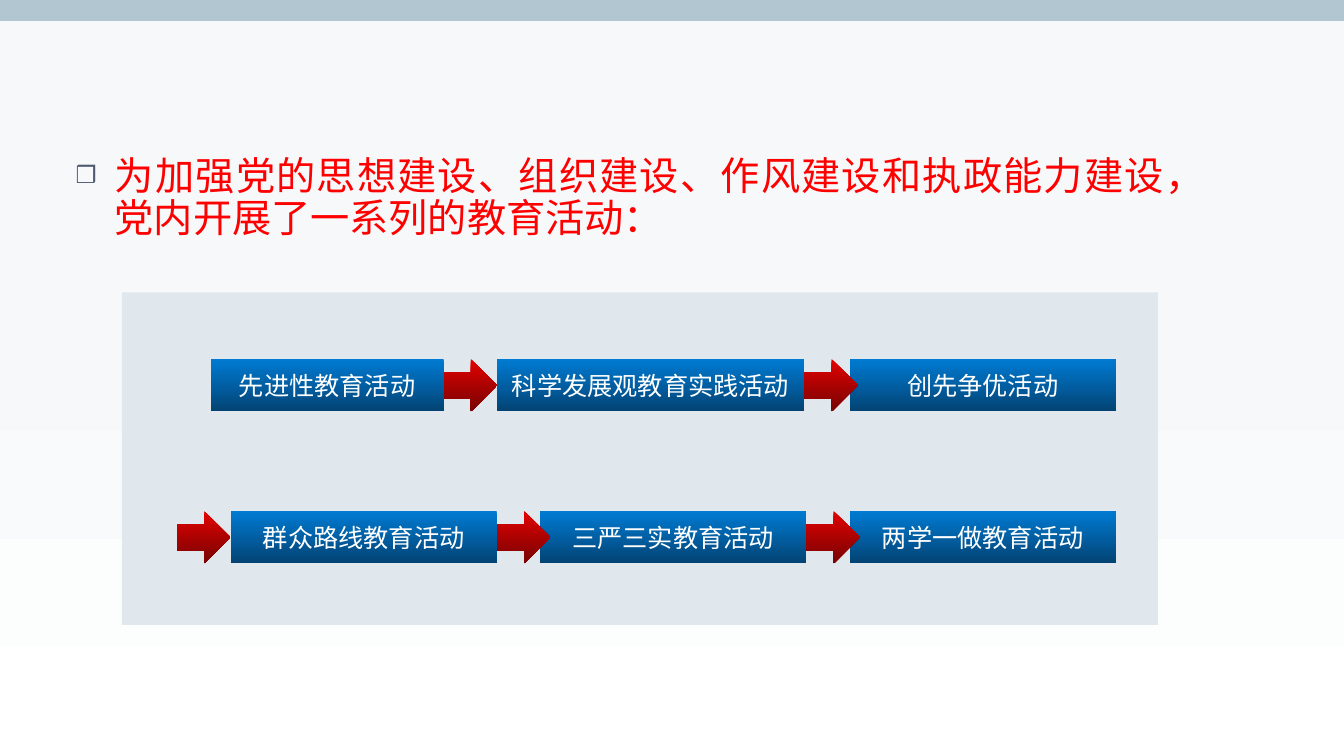
from lxml.etree import SubElement
from pptx import Presentation
from pptx.dml.color import RGBColor
from pptx.enum.shapes import MSO_SHAPE as SHAPE
from pptx.enum.text import MSO_ANCHOR as ANCHOR, MSO_AUTO_SIZE as AUTO, PP_ALIGN as ALIGN
from pptx.oxml.ns import qn
from pptx.util import Cm, Pt

CJK = "Noto Sans CJK SC"
BLUE = ("007BD3", "034373")
RED = ("E30000", "760303")
STEP_H, ARROW_W = 1.32, 1.35
ROWS = [
    (1.68, False, [(2.24, 5.87, "先进性教育活动"),
                   (9.45, 7.75, "科学发展观教育实践活动"),
                   (18.34, 6.71, "创先争优活动")]),
    (5.51, True, [(2.74, 6.71, "群众路线教育活动"),
                  (10.54, 6.71, "三严三实教育活动"),
                  (18.34, 6.71, "两学一做教育活动")]),
]


def rgb(value):
    """Turn a hex string into a colour."""
    return RGBColor.from_string(value)


def add_box(s, kind, box, colors, start=0):
    """Add a shape with a plain fill or a top-to-bottom gradient."""
    sp = s.shapes.add_shape(kind, *map(Cm, box))
    sp.shadow.inherit = False
    sp.line.fill.background()
    if len(colors) == 1:
        sp.fill.solid()
        sp.fill.fore_color.rgb = rgb(colors[0])
        return sp
    sp.fill.gradient()
    sp.fill.gradient_angle = 270
    for stop, color, pos in zip(sp.fill.gradient_stops, colors, (start, 1)):
        stop.color.rgb = rgb(color)
        stop.position = pos
    return sp


def write(p, text, size=18, color="FFFFFF", font=CJK, align=ALIGN.CENTER):
    """Put formatted text into a paragraph."""
    p.alignment = align
    r = p.add_run()
    r.text = text
    r.font.size = Pt(size)
    r.font.color.rgb = rgb(color)
    r.font.name = font
    SubElement(r.font._element, qn("a:ea"), typeface=CJK)


def add_bullet(p, char, color, percent, indent):
    """Give a paragraph a coloured bullet with a hanging indent."""
    pPr = p._p.get_or_add_pPr()
    pPr.set("marL", str(Cm(indent)))
    pPr.set("indent", str(-Cm(indent)))
    clr = SubElement(pPr, qn("a:buClr"))
    SubElement(clr, qn("a:srgbClr"), val=color)
    SubElement(pPr, qn("a:buSzPct"), val=str(percent * 1000))
    SubElement(pPr, qn("a:buFont"), typeface="Arial")
    SubElement(pPr, qn("a:buChar"), char=char)


def add_backdrop(s, box):
    """Paint the slide background and the pale gradient below its top band."""
    s.background.fill.solid()
    s.background.fill.fore_color.rgb = rgb("B2C6D2")
    sp = add_box(s, SHAPE.RECTANGLE, box, ("F6F8FA", "FFFFFF"), start=0.41)
    s.shapes._spTree.insert(2, sp._element)


def add_body(s, box):
    """Place the bulleted introduction in the body placeholder."""
    sp = s.placeholders[1]
    sp.left, sp.top, sp.width, sp.height = map(Cm, box)
    tf = sp.text_frame
    tf.word_wrap = True
    tf.auto_size = AUTO.NONE
    tf.vertical_anchor = ANCHOR.TOP
    p = tf.paragraphs[0]
    add_bullet(p, "❒", "4F5A71", 60, 0.99)
    p.line_spacing = 0.9
    p.space_before = Pt(0)
    write(p, "为加强党的思想建设、组织建设、作风建设和执政能力建设，党内开展了一系列的教育活动：",
          size=28, color="FF0000", font="Arial", align=ALIGN.JUSTIFY)


def add_row(s, left, top, lead, steps):
    """Draw one row of steps with an arrow after each step but the last."""
    for x, w, text in steps:
        sp = add_box(s, SHAPE.RECTANGLE, (left + x, top, w, STEP_H), BLUE)
        sp.text_frame.word_wrap = True
        sp.text_frame.vertical_anchor = ANCHOR.MIDDLE
        write(sp.text_frame.paragraphs[0], text)
    arrows = [x + w for x, w, _ in steps[:-1]]
    if lead:
        arrows.insert(0, steps[0][0] - ARROW_W)
    for x in arrows:
        add_box(s, SHAPE.RIGHT_ARROW, (left + x, top, ARROW_W, STEP_H), RED)


def add_flow(s, box):
    """Draw the panel and its rows of activities."""
    add_box(s, SHAPE.RECTANGLE, box, ("E0E8ED",))
    left, top = box[:2]
    for y, lead, steps in ROWS:
        add_row(s, left, top + y, lead, steps)


def main():
    """Build and save the slide."""
    prs = Presentation()
    prs.slide_width, prs.slide_height = Cm(33.87), Cm(19.05)
    s = prs.slides.add_slide(prs.slide_layouts[1])
    title = s.shapes.title._element
    title.getparent().remove(title)
    add_backdrop(s, (0, 0.52, 33.87, 18.53))
    add_body(s, (1.65, 3.81, 28.96, 13.94))
    add_flow(s, (3.07, 7.37, 26.11, 8.38))
    prs.save("out.pptx")


if __name__ == "__main__":
    main()
